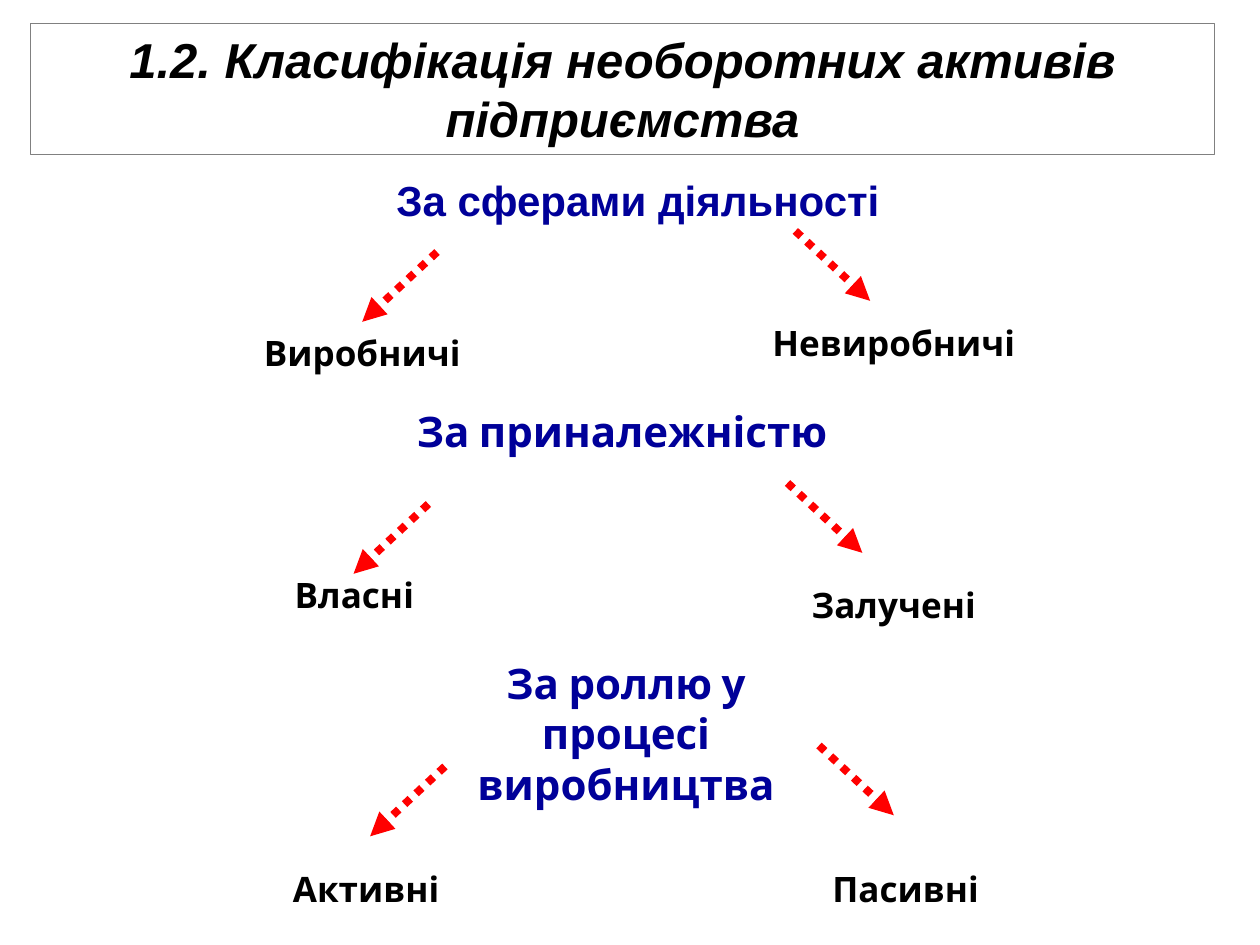
import pptx
import pptx.util
import pptx.dml.color
import pptx.enum.dml
import pptx.enum.shapes
import pptx.enum.text
import pptx.oxml

BLACK = pptx.dml.color.RGBColor(0, 0, 0)
NAVY = pptx.dml.color.RGBColor(0, 0, 0x99)
RED = pptx.dml.color.RGBColor(0xFF, 0, 0)
GREY = pptx.dml.color.RGBColor(0x80, 0x80, 0x80)

deck = pptx.Presentation()
deck.slide_width = pptx.util.Inches(10)
deck.slide_height = pptx.util.Inches(7.5)
COL = deck.slide_width / 160
ROW = deck.slide_height / 90
slide = deck.slides.add_slide(deck.slide_layouts[5])


def write(box, text, size, color, face, slant=False):
    frame = box.text_frame
    frame.word_wrap = True
    frame.auto_size = pptx.enum.text.MSO_AUTO_SIZE.NONE
    para = frame.paragraphs[0]
    para.alignment = pptx.enum.text.PP_ALIGN.CENTER
    run = para.add_run()
    run.text = text
    run.font.size = pptx.util.Pt(size)
    run.font.name = face
    run.font.bold = True
    run.font.italic = slant
    run.font.color.rgb = color


def label(text, x, y, wide, high, size, color, face="Cabin"):
    box = slide.shapes.add_textbox(
        int(x * COL), int(y * ROW), int(wide * COL), int(high * ROW))
    write(box, text, size, color, face)


title = slide.shapes.title
title.left, title.top = int(3.9 * COL), int(2.25 * ROW)
title.width, title.height = int(150.3 * COL), int(12.5 * ROW)
title.line.color.rgb = GREY
title.line.width = pptx.util.Pt(0.75)
title.text_frame.vertical_anchor = pptx.enum.text.MSO_ANCHOR.TOP
write(title, "1.2. Класифікація необоротних активів підприємства",
      28, BLACK, "Arial", True)

# Headings: text, column, row, width, height, font
heads = [
    ("За сферами діяльності", 33.5, 16, 95, 6, "Arial"),
    ("За приналежністю", 43, 38, 72, 6, "Cabin"),
    ("За роллю у процесі виробництва", 57, 62, 45, 15.7, "Cabin"),
]
for text, x, y, wide, high, face in heads:
    label(text, x, y, wide, high, 24, NAVY, face)

# Kinds: text, column, row, width
kinds = [
    ("Виробничі", 25, 31, 42), ("Невиробничі", 91, 30, 45),
    ("Власні", 20, 54, 50), ("Залучені", 83, 55, 61),
    ("Активні", 28, 82, 37), ("Пасивні", 95, 82, 40),
]
for text, x, y, wide in kinds:
    label(text, x, y, wide, 5.2, 20, BLACK)

# Each pair of arrows: left start, right start, row of the left start
RUN, DROP, LIFT = 9.5, 6.65, 2
for left, right, row in [(55.5, 101, 24), (54.4, 100, 48), (56.5, 104, 73)]:
    for x, y, way in [(left, row, -1), (right, row - LIFT, 1)]:
        arrow = slide.shapes.add_connector(
            pptx.enum.shapes.MSO_CONNECTOR.STRAIGHT,
            int(x * COL), int(y * ROW),
            int((x + way * RUN) * COL), int((y + DROP) * ROW))
        arrow.line.color.rgb = RED
        arrow.line.width = pptx.util.Pt(4.5)
        arrow.line.dash_style = pptx.enum.dml.MSO_LINE.ROUND_DOT
        for tag, home in [('a:tailEnd type="triangle"', arrow.line._get_or_add_ln()),
                          ("a:effectLst", arrow._element.spPr)]:
            home.append(pptx.oxml.parse_xml(
                f'<{tag} xmlns:a="http://schemas.openxmlformats.org/drawingml/2006/main"/>'))

deck.save("out.pptx")
